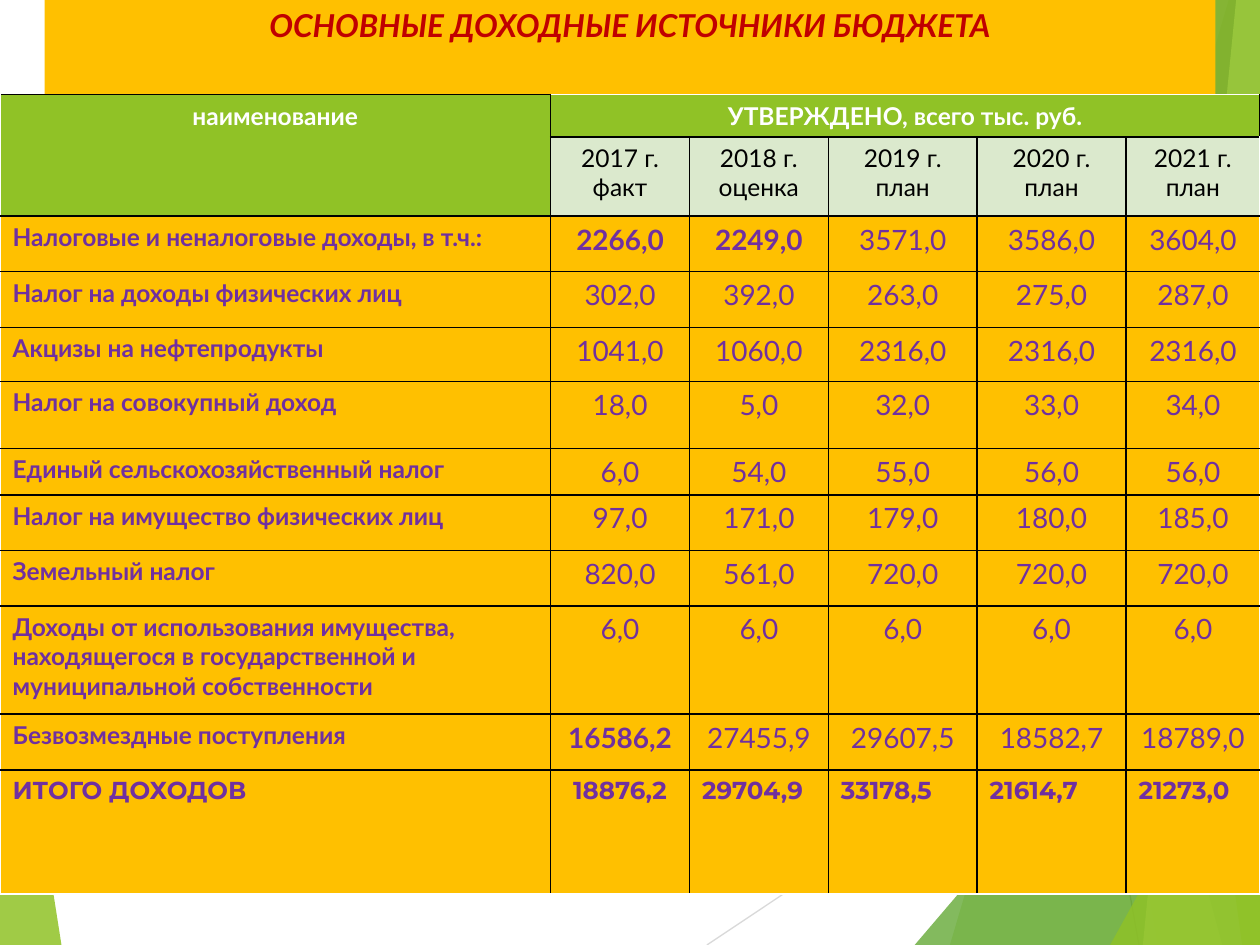
from dataclasses import dataclass

from lxml import etree
from pptx import Presentation
from pptx import util as u
from pptx.dml.color import RGBColor
from pptx.enum import shapes, text
from pptx.oxml.ns import qn


@dataclass(frozen=True)
class Theme:
    font: str = "Lato"
    total_font: str = "Montserrat"
    title_size: int = 18
    label_size: int = 14
    value_size: int = 16
    gold: str = "FFC000"
    green: str = "90C226"
    mid_green: str = "54A021"
    dark_green: str = "3F7819"
    lime: str = "C0E474"
    pale: str = "DBE9CD"
    purple: str = "7030A0"
    red: str = "C00000"
    white: str = "FFFFFF"
    black: str = "000000"
    light_grey: str = "D9D9D9"
    grey: str = "BFBFBF"


class Deck:
    def __init__(self, theme, width, height):
        self.theme = theme
        self.show = Presentation()
        self.show.slide_width, self.show.slide_height = u.Cm(width), u.Cm(height)
        self.slide = self.show.slides.add_slide(self.show.slide_layouts[6])

    def paint(self, fill, color, opacity=100):
        fill.solid()
        fill.fore_color.rgb = RGBColor.from_string(color)
        if opacity < 100:
            tint = fill._xPr.find(qn("a:solidFill"))[0]
            etree.SubElement(tint, qn("a:alpha"), val=str(opacity * 1000))

    def label(self, frame, words, color, size, font=None, bold=False,
              italic=False, centred=True):
        frame.text = words
        line = frame.paragraphs[0]
        line.alignment = text.PP_ALIGN.CENTER if centred else text.PP_ALIGN.LEFT
        style = line.runs[0].font
        style.name = font or self.theme.font
        style.size = u.Pt(size)
        style.bold, style.italic = bold, italic
        style.color.rgb = RGBColor.from_string(color)

    def facet(self, corners, color, opacity):
        points = [(u.Cm(x), u.Cm(y)) for x, y in corners]
        builder = self.slide.shapes.build_freeform(*points[0])
        builder.add_line_segments(points[1:], close=True)
        facet = builder.convert_to_shape()
        facet.shadow.inherit = False
        facet.line.fill.background()
        self.paint(facet.fill, color, opacity)

    def line(self, start, end, color):
        line = self.slide.shapes.add_connector(
            shapes.MSO_CONNECTOR.STRAIGHT, *map(u.Cm, start + end))
        line.line.width = u.Pt(0.75)
        line.line.color.rgb = RGBColor.from_string(color)
        etree.SubElement(line._element.spPr, qn("a:effectLst"))

    def title(self, words, left, top, width, height):
        banner = self.slide.shapes.add_shape(
            shapes.MSO_SHAPE.RECTANGLE, *map(u.Cm, (left, top, width, height)))
        banner.shadow.inherit = False
        banner.line.fill.background()
        self.paint(banner.fill, self.theme.gold)
        banner.text_frame.vertical_anchor = text.MSO_ANCHOR.TOP
        self.label(banner.text_frame, words, self.theme.red, self.theme.title_size,
                   bold=True, italic=True)

    def borders(self, cell, **sides):
        props = cell._tc.get_or_add_tcPr()
        for side in "LRTB":
            edge = etree.SubElement(props, qn(f"a:ln{side}"), w=str(u.Pt(1)))
            solid = etree.SubElement(edge, qn("a:solidFill"))
            etree.SubElement(solid, qn("a:srgbClr"), val=sides[side])

    def table(self, top, columns, rows):
        grid = self.slide.shapes.add_table(
            len(rows), len(columns), 0, u.Cm(top),
            u.Cm(sum(columns)), u.Cm(sum(rows))).table
        for column, width in zip(grid.columns, columns):
            column.width = u.Cm(width)
        for row, height in zip(grid.rows, rows):
            row.height = u.Cm(height)
        white, black = self.theme.white, self.theme.black
        last_row, last_column = len(rows) - 1, len(columns) - 1
        for r in range(len(rows)):
            for c in range(len(columns)):
                self.borders(
                    grid.cell(r, c),
                    L=white if c == 0 else black,
                    R=white if c == last_column else black,
                    T=white if r == 0 and c > 0 else black,
                    B=white if r == last_row else black)
        return grid

    def cell(self, cell, words, fill, color, size, **style):
        self.paint(cell.fill, fill)
        self.label(cell.text_frame, words, color, size, **style)


YEARS = ["2017 г. факт", "2018 г. оценка", "2019 г. план", "2020 г. план", "2021 г. план"]
INCOME = [
    ("Налоговые и неналоговые доходы, в т.ч.:", "2266,0 2249,0 3571,0 3586,0 3604,0", 2),
    ("Налог на доходы физических лиц", "302,0 392,0 263,0 275,0 287,0", 0),
    ("Акцизы на нефтепродукты", "1041,0 1060,0 2316,0 2316,0 2316,0", 0),
    ("Налог на совокупный доход", "18,0 5,0 32,0 33,0 34,0", 0),
    ("Единый сельскохозяйственный налог", "6,0 54,0 55,0 56,0 56,0", 0),
    ("Налог на имущество физических лиц", "97,0 171,0 179,0 180,0 185,0", 0),
    ("Земельный налог", "820,0 561,0 720,0 720,0 720,0", 0),
    ("Доходы от использования имущества, находящегося в государственной "
     "и муниципальной собственности", "6,0 6,0 6,0 6,0 6,0", 0),
    ("Безвозмездные поступления", "16586,2 27455,9 29607,5 18582,7 18789,0", 1),
]
TOTAL = ("ИТОГО ДОХОДОВ", "18876,2 29704,9 33178,5 21614,7 21273,0")
COLUMNS = [11.1, 2.8, 2.8, 3, 3, 2.7]
ROWS = [0.84, 1.6, 1.12, 1.12, 1.09, 1.35, 0.94, 1.12, 1.12, 2.18, 1.12, 2.5]
WIDTH, HEIGHT = 25.4, 19.05


def draw_background(deck):
    theme = deck.theme
    corner, right_top = (WIDTH, HEIGHT), (WIDTH, 0)
    deck.facet([(0, 11.15), (1.24, HEIGHT), (0, HEIGHT)], theme.green, 85)
    deck.line((14.25, HEIGHT), (WIDTH, 11.61), theme.light_grey)
    deck.line((19.56, 0), (22.96, HEIGHT), theme.grey)
    for top, bottom, color, opacity in [
        ((24.77, 0), 19.15, theme.green, 30),
        ((20.02, 0), 23.34, theme.green, 20),
        ((WIDTH, 10.9), 18.44, theme.mid_green, 72),
        ((19.48, 0), 24.64, theme.dark_green, 70),
        ((24.92, 0), 23.04, theme.lime, 70),
        ((22.43, 0), 25.04, theme.green, 65),
        ((WIDTH, 13.59), 22.38, theme.green, 80),
    ]:
        edge = [right_top] if top[1] == 0 else []
        deck.facet([top, (bottom, HEIGHT), corner] + edge, color, opacity)


def draw_income(deck):
    theme = deck.theme
    grid = deck.table(1.91, COLUMNS, ROWS)
    grid.cell(0, 0).merge(grid.cell(1, 0))
    grid.cell(0, 1).merge(grid.cell(0, 5))
    for c, heading in enumerate(["наименование", "УТВЕРЖДЕНО, всего тыс. руб."]):
        deck.cell(grid.cell(0, c), heading, theme.green, theme.white,
                  theme.label_size, bold=True)
    for c, year in enumerate(YEARS, 1):
        deck.cell(grid.cell(1, c), year, theme.pale, theme.black, theme.label_size)
    for r, (source, values, bold_count) in enumerate(INCOME, 2):
        deck.cell(grid.cell(r, 0), source, theme.gold, theme.purple,
                  theme.label_size, bold=True, centred=False)
        for c, value in enumerate(values.split(), 1):
            deck.cell(grid.cell(r, c), value, theme.gold, theme.purple,
                      theme.value_size, bold=c <= bold_count)
    total, sums = TOTAL
    for c, words in enumerate([total] + sums.split()):
        deck.cell(grid.cell(len(ROWS) - 1, c), words, theme.gold, theme.purple,
                  theme.label_size, font=theme.total_font, bold=True, centred=c == 1)


def main():
    deck = Deck(Theme(), WIDTH, HEIGHT)
    draw_background(deck)
    deck.title("ОСНОВНЫЕ ДОХОДНЫЕ ИСТОЧНИКИ БЮДЖЕТА", 0.9, 0, 23.6, 1.91)
    draw_income(deck)
    deck.show.save("out.pptx")


if __name__ == "__main__":
    main()
